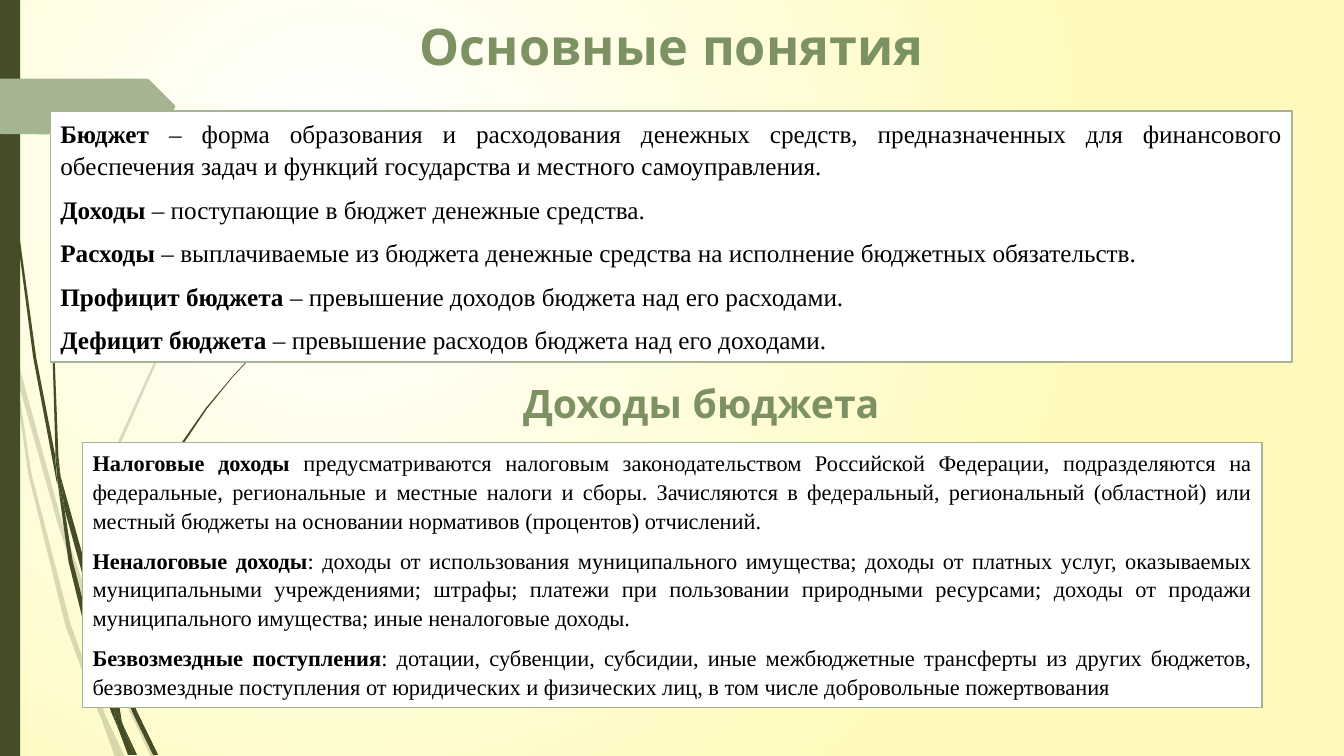
import pptx
import pptx.util
import pptx.dml.color
import pptx.enum.shapes
import pptx.enum.text
import pptx.oxml

PX = 9144  # EMU per px, 100 px to the inch
COLORS = {"olive": "444D26", "sage": "A5B592", "heading": "7D9263", "outline": "536142",
          "white": "FFFFFF", "cream": "FFFABB", "black": "000000"}
NAMESPACE = 'xmlns:a="http://schemas.openxmlformats.org/drawingml/2006/main"'
ALIGN = pptx.enum.text.PP_ALIGN
RECTANGLE = pptx.enum.shapes.MSO_SHAPE.RECTANGLE


def paint(shape, color, line=None):
    shape.shadow.inherit = False
    shape.fill.solid()
    shape.fill.fore_color.rgb = pptx.dml.color.RGBColor.from_string(COLORS[color])
    if line:
        shape.line.color.rgb = pptx.dml.color.RGBColor.from_string(COLORS[line])
        shape.line.width = pptx.util.Pt(1.25)
    else:
        shape.line.fill.background()


def draw_outline(shapes, points, color):
    builder = shapes.build_freeform(*points[0], scale=PX)
    builder.add_line_segments(points[1:], close=True)
    outline = builder.convert_to_shape()
    paint(outline, color)
    return outline


deck = pptx.Presentation()
deck.slide_width, deck.slide_height = pptx.util.Emu(12192000), pptx.util.Emu(6858000)
page = deck.slides.add_slide(deck.slide_layouts[6])

# Background glow
page.background.fill.solid()
background = page.background._cSld.bg.bgPr
background.replace(background[0], pptx.oxml.parse_xml(
    f'<a:gradFill {NAMESPACE} rotWithShape="1"><a:gsLst>'
    f'<a:gs pos="5000"><a:srgbClr val="{COLORS["white"]}"/></a:gs>'
    f'<a:gs pos="100000"><a:srgbClr val="{COLORS["cream"]}"/></a:gs></a:gsLst>'
    '<a:path path="circle"><a:fillToRect l="50000" t="50000" r="100000" b="100000"/></a:path>'
    '</a:gradFill>'))

# Grass blades
pale_blades = [
    [(11, 350), (9, 322), (0, 282), (0, 299), (10, 344)],
    [(58, 522), (84, 599), (85, 586), (62, 520), (14, 345), (17, 376)],
    [(92, 607), (88, 596), (88, 610), (123, 694), (150, 751), (155, 751), (127, 692)],
    [(119, 751), (124, 751), (105, 711)],
    [(93, 683), (70, 619), (31, 469), (17, 376), (11, 350), (28, 470), (65, 621), (92, 693),
     (101, 714), (99, 707)],
    [(84, 599), (87, 646), (93, 683), (96, 692), (105, 711), (103, 706), (91, 646), (88, 610),
     (88, 608)],
    [(88, 584), (110, 462), (160, 349), (229, 245), (268, 198), (290, 175), (312, 154), (312, 153),
     (289, 175), (268, 197), (228, 244), (158, 348), (107, 461), (85, 584), (85, 586), (88, 596)],
    [(101, 714), (114, 751), (119, 751)],
    [(96, 692), (93, 683), (99, 707), (101, 714), (119, 751), (105, 711)],
]
dark_blades = [
    [(7, 110), (17, 233), (33, 355), (56, 477), (57, 481), (55, 457), (55, 453), (36, 355),
     (19, 232), (8, 109), (5, 48), (4, 0), (3, 0), (4, 48)],
    [(88, 592), (106, 645), (106, 633), (106, 631), (93, 590), (60, 472), (64, 505)],
    [(113, 649), (110, 641), (111, 656), (132, 708), (152, 749), (157, 749), (136, 706)],
    [(110, 691), (98, 657), (72, 556), (64, 505), (57, 477), (68, 557), (93, 659), (111, 708),
     (117, 722), (116, 717)],
    [(60, 472), (58, 453), (54, 349), (58, 245), (63, 193), (70, 141), (62, 193), (56, 245),
     (52, 349), (55, 449)],
    [(133, 749), (136, 749), (122, 719)],
    [(57, 477), (64, 505), (60, 472), (55, 449), (55, 453)],
    [(111, 633), (125, 552), (158, 476), (205, 406), (231, 374), (245, 359), (261, 344), (260, 344),
     (245, 358), (231, 373), (204, 405), (156, 474), (122, 551), (106, 631), (110, 641)],
    [(117, 722), (127, 749), (131, 749)],
    [(106, 645), (110, 691), (116, 706), (122, 719), (121, 716), (111, 656), (109, 651)],
    [(116, 706), (110, 691), (116, 717), (117, 722), (130, 749), (133, 749), (122, 719)],
]
for blades, opacity in ((pale_blades, 20), (dark_blades, 100)):
    tuft = page.shapes.add_group_shape()
    for points in blades:
        blade = draw_outline(tuft.shapes, points, "olive")
        if opacity < 100:
            tint = blade._element.spPr.find(".//{*}solidFill/{*}srgbClr")
            tint.append(pptx.oxml.parse_xml(f'<a:alpha {NAMESPACE} val="{opacity * 1000}"/>'))

side_bar = page.shapes.add_shape(RECTANGLE, 0, 0, 20 * PX, 750 * PX)
paint(side_bar, "olive")
draw_outline(page.shapes, [(0, 78), (146, 78), (148, 79), (173, 104), (174, 106), (173, 108),
                           (148, 133), (146, 134), (136, 134), (0, 133)], "sage")

# Definition boxes: place, text size, (term, explanation) pairs
boxes = [
    ((50, 110, 1232, 249), 18, [
        ("Бюджет", " – форма образования и расходования денежных средств, предназначенных для "
         "финансового обеспечения задач и функций государства и местного самоуправления."),
        ("Доходы", " – поступающие в бюджет денежные средства."),
        ("Расходы", " – выплачиваемые из бюджета денежные средства на исполнение бюджетных "
         "обязательств."),
        ("Профицит бюджета ", "– превышение доходов бюджета над его расходами."),
        ("Дефицит бюджета ", "– превышение расходов бюджета над его доходами."),
    ]),
    ((82, 439, 1170, 263), 16, [
        ("Налоговые доходы ", "предусматриваются налоговым законодательством Российской Федерации, "
         "подразделяются на федеральные, региональные и местные налоги и сборы. Зачисляются в "
         "федеральный, региональный (областной) или местный бюджеты на основании нормативов "
         "(процентов) отчислений."),
        ("Неналоговые доходы", ": доходы от использования муниципального имущества; доходы от "
         "платных услуг, оказываемых муниципальными учреждениями; штрафы; платежи при пользовании "
         "природными ресурсами; доходы от продажи муниципального имущества; иные неналоговые "
         "доходы."),
        ("Безвозмездные поступления", ": дотации, субвенции, субсидии, иные межбюджетные трансферты "
         "из других бюджетов, безвозмездные поступления от юридических и физических лиц, в том "
         "числе добровольные пожертвования"),
    ]),
]
for place, size, definitions in boxes:
    box = page.shapes.add_shape(RECTANGLE, *(length * PX for length in place))
    paint(box, "white", "sage")
    frame = box.text_frame
    frame.word_wrap = True
    frame.auto_size = pptx.enum.text.MSO_AUTO_SIZE.SHAPE_TO_FIT_TEXT
    frame.vertical_anchor = pptx.enum.text.MSO_ANCHOR.TOP
    for index, definition in enumerate(definitions):
        para = frame.add_paragraph() if index else frame.paragraphs[0]
        para.alignment = ALIGN.JUSTIFY
        para.line_spacing = 1.07
        para.space_after = pptx.util.Pt(8)
        para.font.name = "Times New Roman"
        para.font.size = pptx.util.Pt(size)
        para.font.color.rgb = pptx.dml.color.RGBColor.from_string(COLORS["black"])
        for words, bold in zip(definition, (True, False)):
            span = para.add_run()
            span.text = words
            span.font.bold = bold

# Headings
headings = [
    ("Основные понятия", (0, 10, 1333, 91), 36, ALIGN.CENTER, True, "TOP"),
    ("Доходы бюджета", (509, 371, 378, 57), 28, ALIGN.LEFT, False, "MIDDLE"),
]
for words, place, size, alignment, wraps, anchor in headings:
    box = page.shapes.add_textbox(*(length * PX for length in place))
    box.text_frame.word_wrap = wraps
    box.text_frame.vertical_anchor = pptx.enum.text.MSO_ANCHOR[anchor]
    para = box.text_frame.paragraphs[0]
    para.alignment = alignment
    para.font.name = "Quicksand"
    para.font.size = pptx.util.Pt(size)
    para.font.bold = True
    span = para.add_run()
    span.text = words
    span.font.color.rgb = pptx.dml.color.RGBColor.from_string(COLORS["heading"])
    span.font._element.insert(0, pptx.oxml.parse_xml(
        f'<a:ln {NAMESPACE} w="9525"><a:solidFill><a:srgbClr val="{COLORS["outline"]}"/>'
        '</a:solidFill></a:ln>'))

deck.save("out.pptx")
